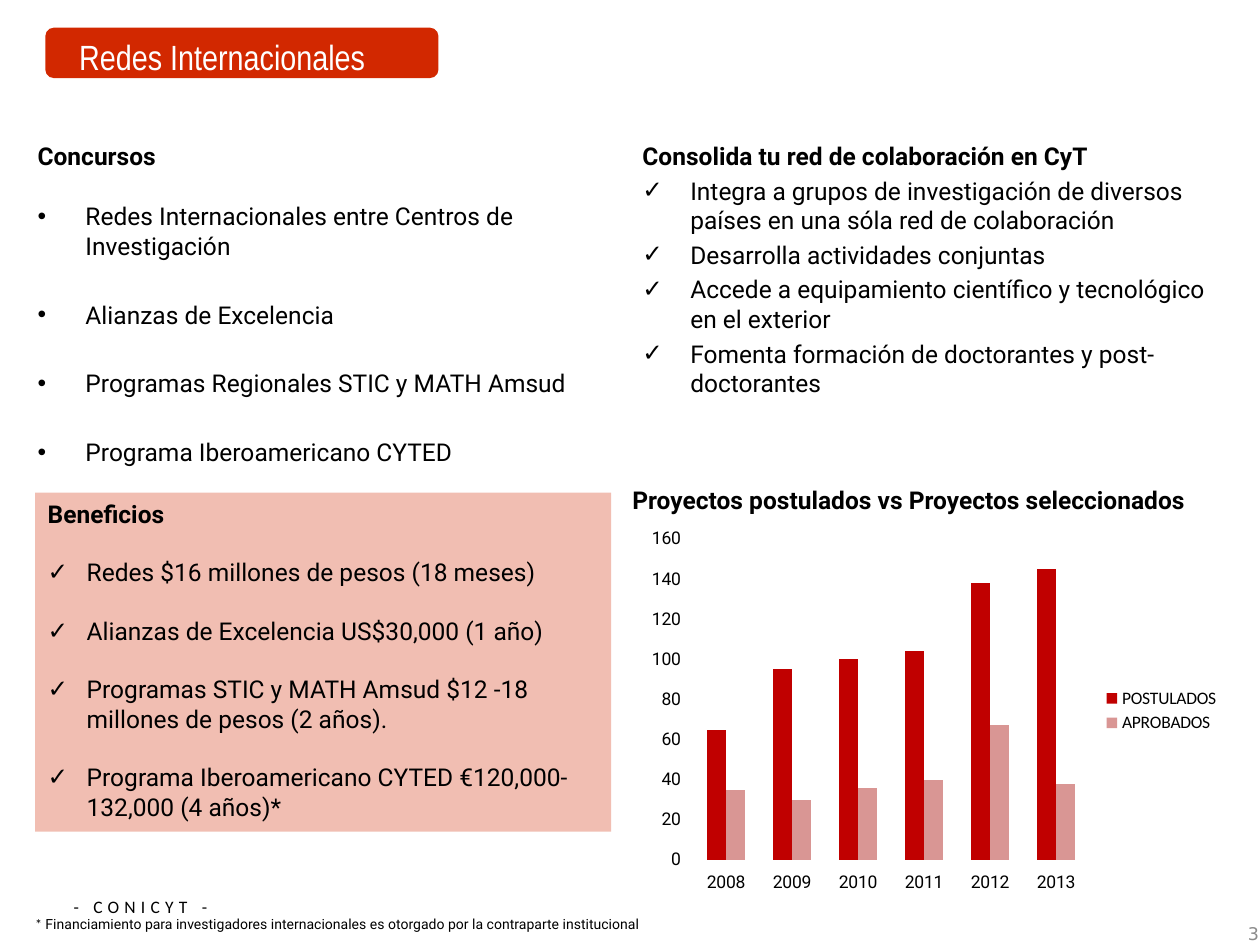
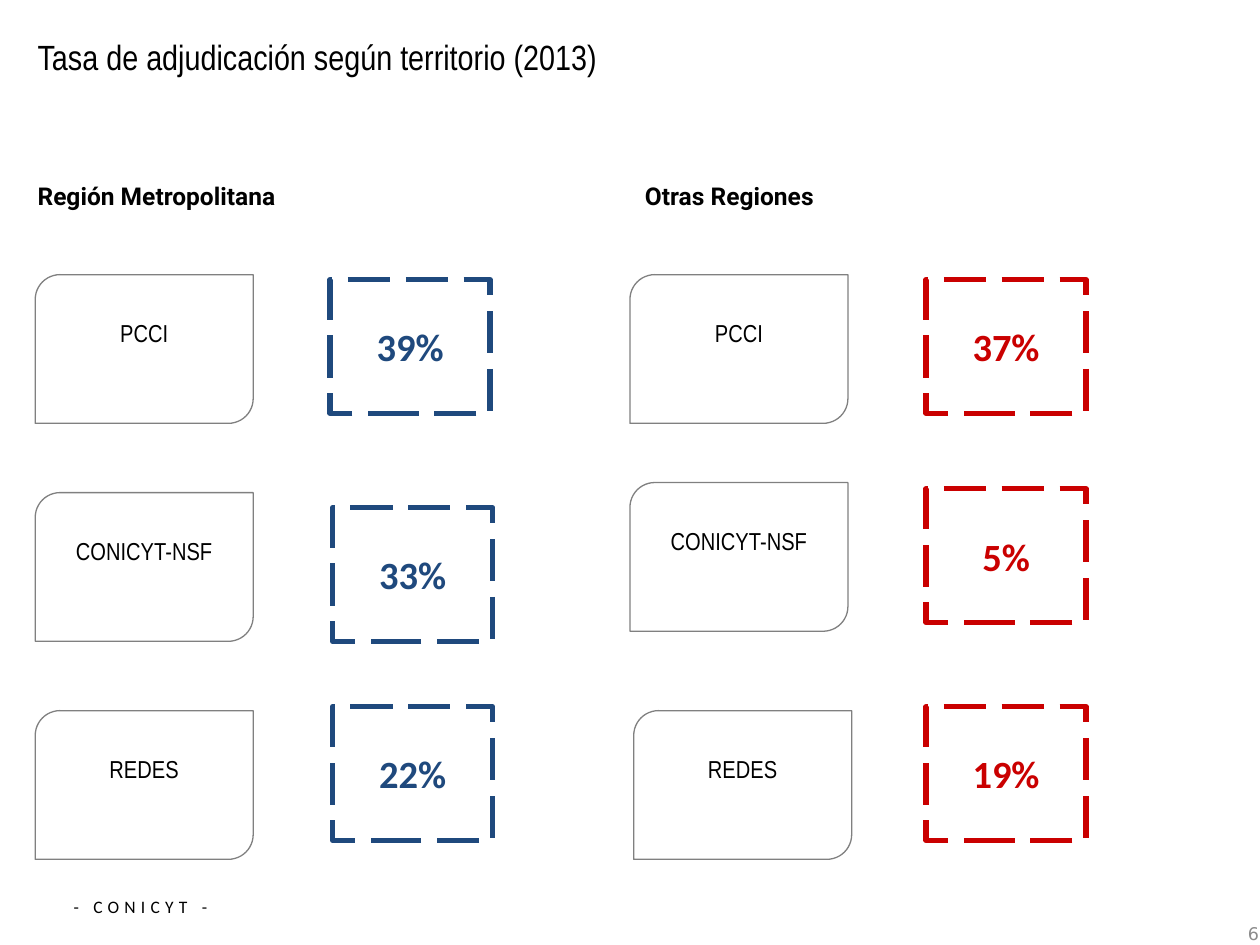
from dataclasses import dataclass, replace

from lxml import etree
from pptx import Presentation
from pptx import util as u
from pptx.chart import data as chart_data
from pptx.dml.color import RGBColor
from pptx.enum import chart as charts, dml, shapes, text
from pptx.oxml.ns import qn

# ---- Content ----
FOOTER = "- CONICYT -"
FOOTNOTE = (" Financiamiento para investigadores internacionales es otorgado"
            " por la contraparte institucional")
CALLS = [
    "Redes Internacionales entre Centros de Investigación",
    "Alianzas de Excelencia",
    "Programas Regionales STIC y MATH Amsud",
    "Programa Iberoamericano CYTED",
]
NETWORK_GOALS = [
    "Integra a grupos de investigación de diversos países en una sóla red de colaboración",
    "Desarrolla actividades conjuntas",
    "Accede a equipamiento científico y tecnológico en el exterior",
    "Fomenta formación de doctorantes y post-doctorantes",
]
BENEFITS = [
    "Redes $16 millones de pesos (18 meses)",
    "Alianzas de Excelencia US$30,000 (1 año)",
    "Programas STIC y MATH Amsud $12 -18 millones de pesos (2 años).",
    "Programa Iberoamericano CYTED €120,000-132,000 (4 años)*",
]
YEARS = ["2008", "2009", "2010", "2011", "2012", "2013"]
PROJECTS = {
    "POSTULADOS": [65, 95, 100, 104, 138, 145],
    "APROBADOS": [35, 30, 36, 40, 67, 38],
}
# Each programme: name, left and top of its card, rate, left and top of its rate
REGIONS = [
    {"name": "Región Metropolitana", "left": 0.2, "colour": "1F497D", "programmes": [
        ("PCCI", 0.28, 2.18, "39%", 2.62, 2.22),
        ("CONICYT-NSF", 0.28, 3.91, "33%", 2.64, 4.03),
        ("REDES", 0.28, 5.64, "22%", 2.64, 5.61)]},
    {"name": "Otras Regiones", "left": 5.02, "colour": "CA0000", "programmes": [
        ("PCCI", 5, 2.18, "37%", 7.35, 2.22),
        ("CONICYT-NSF", 5, 3.83, "5%", 7.35, 3.88),
        ("REDES", 5.03, 5.64, "19%", 7.35, 5.61)]},
]


# ---- Theme ----
@dataclass(frozen=True)
class Style:
    font: str
    size: float
    colour: str = "000000"
    bold: bool = False
    align: text.PP_ALIGN = text.PP_ALIGN.LEFT


class Theme:
    red = "D22800"
    white = "FFFFFF"
    card_line = "808080"
    series = ["C00000", "D99694"]
    title = Style("Arial Narrow", 20)
    heading = Style("Roboto", 14, bold=True)
    body = Style("Roboto", 14)
    footnote = Style("Roboto", 8)
    footer = Style("Calibri", 10, align=text.PP_ALIGN.CENTER)
    number = Style("DejaVu Sans", 10, "8C8C8C", align=text.PP_ALIGN.RIGHT)
    card = Style("Arial Narrow", 14, align=text.PP_ALIGN.CENTER)
    rate = Style("Calibri", 22, bold=True, align=text.PP_ALIGN.CENTER)
    chart = Style("Calibri", 10)
    axis = Style("Roboto", 10)


# ---- Helpers ----
def rgb(colour):
    return RGBColor.from_string(colour)


def set_font(font, style):
    font.name = style.font
    font.size = u.Pt(style.size)
    font.bold = style.bold
    font.color.rgb = rgb(style.colour)


def add_bullet(para, mark, indent):
    props = para._p.get_or_add_pPr()
    props.set("marL", str(u.Inches(indent)))
    props.set("indent", str(-u.Inches(indent)))
    etree.SubElement(props, qn("a:buFont"), typeface="Arial")
    etree.SubElement(props, qn("a:buChar"), char=mark)


def write(frame, lines, style, heading=None, mark=None, indent=0.38, gap=0.0):
    """Fill a frame with an optional bold heading and lines, gap points apart."""
    frame.word_wrap = True
    entries = [(heading, Theme.heading, None)] if heading else []
    entries += [(line, style, mark) for line in lines]
    for index, (line, line_style, bullet) in enumerate(entries):
        para = frame.add_paragraph() if index else frame.paragraphs[0]
        para.add_run().text = line
        para.alignment = line_style.align
        if index:
            para.space_before = u.Pt(gap)
        if bullet:
            add_bullet(para, bullet, indent)
        set_font(para.font, line_style)


def add_text(page, place, lines, style, anchor=text.MSO_ANCHOR.TOP, **options):
    box = page.shapes.add_textbox(*map(u.Inches, place))
    box.text_frame.vertical_anchor = anchor
    write(box.text_frame, lines, style, **options)
    return box


def add_shape(page, kind, place, fill=None, line=None, width=1.0):
    shape = page.shapes.add_shape(kind, *map(u.Inches, place))
    shape.shadow.inherit = False
    if fill:
        shape.fill.solid()
        shape.fill.fore_color.rgb = rgb(fill)
    else:
        shape.fill.background()
    if line:
        shape.line.color.rgb = rgb(line)
        shape.line.width = u.Pt(width)
    else:
        shape.line.fill.background()
    return shape


def add_title(page, title, left, colour):
    add_text(page, (left, 0.13, 5.51, 0.64), [title],
             replace(Theme.title, colour=colour), text.MSO_ANCHOR.MIDDLE)


def add_page(deck, number):
    page = deck.slides.add_slide(deck.slide_layouts[6])
    footer = add_text(page, (0.38, 7.06, 1.47, 0.33), [FOOTER], Theme.footer)
    span = footer.text_frame.paragraphs[0].runs[0]
    span._r.get_or_add_rPr().set("spc", "300")
    add_text(page, (7.76, 7.21, 2.33, 0.4), [number], Theme.number,
             text.MSO_ANCHOR.MIDDLE)
    return page


# ---- Slides ----
def add_projects_chart(page):
    data = chart_data.CategoryChartData()
    data.categories = YEARS
    for name, values in PROJECTS.items():
        data.add_series(name, values)
    place = map(u.Inches, (5.08, 4.14, 4.7, 3))
    chart = page.shapes.add_chart(
        charts.XL_CHART_TYPE.COLUMN_CLUSTERED, *place, data).chart
    set_font(chart.font, Theme.chart)
    chart.has_title = False
    chart.has_legend = True
    chart.legend.position = charts.XL_LEGEND_POSITION.RIGHT
    chart.legend.include_in_layout = False

    for axis in (chart.category_axis, chart.value_axis):
        axis.has_major_gridlines = False
        axis.format.line.fill.background()
        set_font(axis.tick_labels.font, Theme.axis)
    chart.value_axis.minimum_scale = 0
    chart.value_axis.maximum_scale = 160
    chart.value_axis.major_unit = 20

    plot = chart.plots[0]
    plot.vary_by_categories = False
    plot.gap_width = 150
    plot.overlap = 0
    for series, colour in zip(plot.series, Theme.series):
        series.invert_if_negative = False
        series.format.fill.solid()
        series.format.fill.fore_color.rgb = rgb(colour)


def add_benefits(page):
    panel = add_shape(page, shapes.MSO_SHAPE.RECTANGLE,
                      (0.28, 3.91, 4.57, 2.69), Theme.red)
    colour = panel._element.spPr.find(".//" + qn("a:srgbClr"))
    etree.SubElement(colour, qn("a:alpha"), val="30000")
    panel.text_frame.vertical_anchor = text.MSO_ANCHOR.TOP
    write(panel.text_frame, BENEFITS, Theme.body, heading="Beneficios",
          mark="✓", indent=0.31, gap=16.6)


def add_footnote(page):
    box = add_text(page, (0.18, 7.22, 5.5, 0.24), ["*"], Theme.footnote)
    para = box.text_frame.paragraphs[0]
    para.runs[0].font.name = Theme.footer.font
    para.add_run().text = FOOTNOTE


def build_networks(deck):
    page = add_page(deck, "3")
    add_shape(page, shapes.MSO_SHAPE.ROUNDED_RECTANGLE,
              (0.36, 0.22, 3.12, 0.4), Theme.red)
    add_title(page, "Redes Internacionales", 0.53, Theme.white)
    add_text(page, (0.2, 1.07, 3.94, 0.34), ["Concursos"], Theme.heading)
    add_text(page, (0.2, 1.55, 4.72, 2.2), CALLS, Theme.body, mark="•", gap=22.5)
    add_text(page, (5, 1.07, 4.72, 2.44), NETWORK_GOALS, Theme.body,
             heading="Consolida tu red de colaboración en CyT", mark="✓", gap=3)
    add_benefits(page)
    add_text(page, (4.92, 3.8, 4.88, 0.34),
             ["Proyectos postulados vs Proyectos seleccionados"], Theme.heading)
    add_projects_chart(page)
    add_footnote(page)


def add_programme(page, colour, name, card_left, card_top, rate, rate_left, rate_top):
    card = add_shape(page, shapes.MSO_SHAPE.ROUND_2_DIAG_RECTANGLE,
                     (card_left, card_top, 1.73, 1.18),
                     Theme.white, Theme.card_line, 0.75)
    card.text_frame.vertical_anchor = text.MSO_ANCHOR.TOP
    card.text_frame.margin_top = u.Inches(0.29)
    write(card.text_frame, [name], Theme.card)

    frame = add_shape(page, shapes.MSO_SHAPE.RECTANGLE,
                      (rate_left, rate_top, 1.27, 1.06), line=colour, width=3)
    frame.line.dash_style = dml.MSO_LINE.LONG_DASH
    frame.text_frame.vertical_anchor = text.MSO_ANCHOR.MIDDLE
    write(frame.text_frame, [rate], replace(Theme.rate, colour=colour))


def build_rates(deck):
    page = add_page(deck, "6")
    add_title(page, "Tasa de adjudicación según territorio (2013)", 0.2,
              Theme.title.colour)
    for region in REGIONS:
        add_text(page, (region["left"], 1.39, 3.21, 0.56), [region["name"]],
                 Theme.heading)
        for programme in region["programmes"]:
            add_programme(page, region["colour"], *programme)


def main():
    deck = Presentation()
    deck.slide_width = u.Inches(10)
    deck.slide_height = u.Inches(7.5)
    build_networks(deck)
    build_rates(deck)
    deck.save("out.pptx")


if __name__ == "__main__":
    main()
